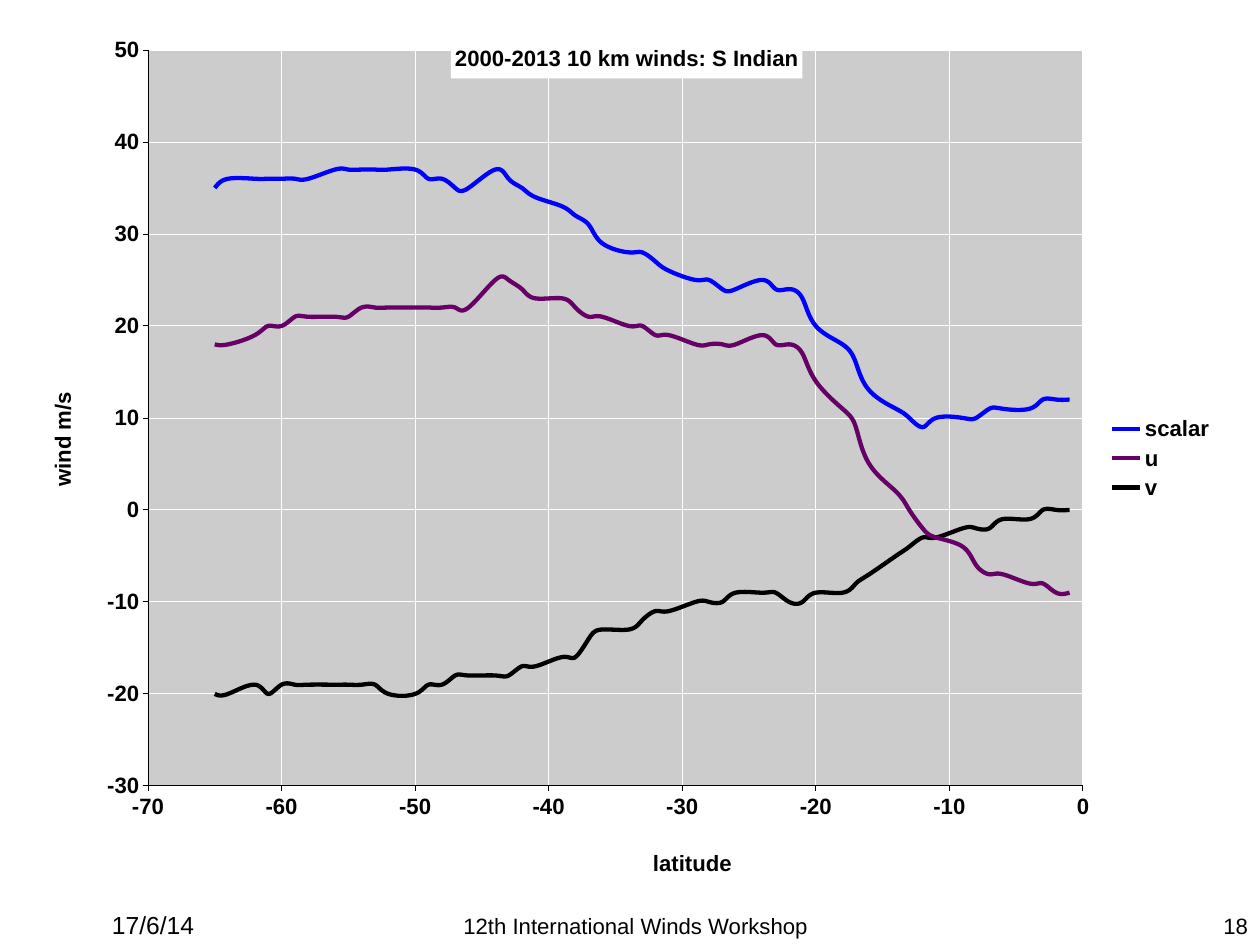
import pptx
import pptx.util
import pptx.chart.data
import pptx.dml.color
import pptx.enum.chart
import pptx.enum.text
import pptx.oxml
import pptx.oxml.ns

RGB = pptx.dml.color.RGBColor
ENUM = pptx.enum.chart
ALIGN = pptx.enum.text.PP_ALIGN
Pt = pptx.util.Pt
qn = pptx.oxml.ns.qn

BLACK = RGB(0x00, 0x00, 0x00)
WHITE = RGB(0xFF, 0xFF, 0xFF)
BLUE = RGB(0x00, 0x00, 0xFF)
PLUM = RGB(0x66, 0x00, 0x66)
GREY = RGB(0xCC, 0xCC, 0xCC)

# Content
SIZE = (1260, 945)
FOOT = [  # text, left, width, size, alignment
    ("17/6/14", 22, 262, 20, ALIGN.CENTER),
    ("12th International Winds Workshop", 436, 399, 18, ALIGN.CENTER),
    ("18", 998, 262, 18, ALIGN.RIGHT),
]
FOOT_TOP, FOOT_HIGH = 882, 63
BOX = (30, 19, 1194, 879)
PLOT = (148, 50, 935, 736)
TITLE = ("2000-2013 10 km winds: S Indian", 451, 40)
X_AXIS = ("latitude", 649, 845)
Y_AXIS = ("wind m/s", 44, 388)
KEY = (1105, 412)
# Whole degrees south, without those that hold no band
GAPS = {5, 10, 15, 19, 25, 30, 35, 40, 45, 51, 57, 63}
LATS = [-deg for deg in range(1, 66) if deg not in GAPS]
WINDS = [
    ("scalar", BLUE, [
        12, 12, 12, 11, 11, 11, 10, 10, 10, 9, 10, 11, 13, 16, 18, 20, 23,
        24, 24, 25, 24, 24, 25, 25, 26, 27, 28, 28, 29, 31, 32, 33, 34, 35,
        36, 37, 35, 35, 36, 36, 37, 37, 37, 37, 37, 37, 36, 36, 36, 36, 36,
        36, 35]),
    ("u", PLUM, [
        -9, -9, -8, -8, -7, -7, -6, -4, -3, -2, 0, 2, 5, 9, 11, 14, 17, 18,
        18, 19, 18, 18, 18, 18, 19, 19, 20, 20, 21, 21, 22, 23, 23, 24, 25,
        25, 22, 22, 22, 22, 22, 22, 22, 22, 21, 21, 21, 21, 20, 20, 19, 18,
        18]),
    ("v", BLACK, [
        0, 0, 0, -1, -1, -2, -2, -2, -3, -3, -4, -5, -7, -8, -9, -9, -10,
        -10, -9, -9, -9, -10, -10, -10, -11, -11, -12, -13, -13, -14, -16,
        -16, -17, -17, -18, -18, -18, -18, -19, -19, -20, -20, -19, -19,
        -19, -19, -19, -19, -19, -20, -19, -20, -20]),
]


def px(n):
    return round(n * 914400 / 88.6)


def apply(item, form):
    for name, val in form.items():
        setattr(item, name, val)


def style(font, size=18, bold=True):
    apply(font, {"name": "Arial", "size": Pt(size), "bold": bold})
    font.color.rgb = BLACK


def stroke(line, color, width):
    line.color.rgb = color
    line.width = Pt(width)


def place(node, left, top, wide=None, high=None):
    """Pin a chart part at a px position inside the chart box."""
    for old in node.findall(qn("c:layout")):
        node.remove(old)
    marks = [("xMode", "edge"), ("yMode", "edge"),
             ("x", round((left - BOX[0]) / BOX[2], 4)),
             ("y", round((top - BOX[1]) / BOX[3], 4))]
    if wide:
        marks.insert(0, ("layoutTarget", "inner"))
        marks += [("w", round(wide / BOX[2], 4)),
                  ("h", round(high / BOX[3], 4))]
    body = "".join(f'<c:{tag} val="{val}"/>' for tag, val in marks)
    spot = pptx.oxml.parse_xml(
        f'<c:layout {pptx.oxml.ns.nsdecls("c")}>'
        f'<c:manualLayout>{body}</c:manualLayout></c:layout>')
    over = node.find(qn("c:overlay"))
    if over is None:
        node.insert(0, spot)
    else:
        over.addprevious(spot)


def label(title, text, left, top):
    frame = title.text_frame
    frame.text = text
    style(frame.paragraphs[0].runs[0].font)
    place(title._element, left, top)


def bend(row):
    """Draw a scatter series as a smooth curve."""
    node = row._element
    for old in node.findall(qn("c:smooth")):
        node.remove(old)
    node.find(qn("c:yVal")).addnext(pptx.oxml.parse_xml(
        f'<c:smooth {pptx.oxml.ns.nsdecls("c")} val="1"/>'))


def build_foot(slide):
    for text, left, wide, size, align in FOOT:
        box = slide.shapes.add_textbox(
            px(left), px(FOOT_TOP), px(wide), px(FOOT_HIGH))
        frame = box.text_frame
        apply(frame, {
            "word_wrap": True,
            "vertical_anchor": pptx.enum.text.MSO_ANCHOR.BOTTOM,
            "margin_left": px(12), "margin_right": px(12),
            "margin_top": px(6), "margin_bottom": px(6)})
        para = frame.paragraphs[0]
        para.alignment = align
        run = para.add_run()
        run.text = text
        style(run.font, size, False)


def build_chart(slide):
    data = pptx.chart.data.XyChartData()
    for name, _, speeds in WINDS:
        row = data.add_series(name)
        for lat, speed in zip(LATS, speeds):
            row.add_data_point(lat, speed)
    chart = slide.shapes.add_chart(
        ENUM.XL_CHART_TYPE.XY_SCATTER_SMOOTH_NO_MARKERS,
        *map(px, BOX), data).chart
    style(chart.font, 10, False)
    chart.plots[0].vary_by_categories = False

    # Curves
    for row, (_, color, _) in zip(chart.plots[0].series, WINDS):
        bend(row)
        row.marker.style = ENUM.XL_MARKER_STYLE.NONE
        stroke(row.format.line, color, 3.5)

    # Axes
    for axis, low, high, text in ((chart.category_axis, -70, 0, X_AXIS),
                                  (chart.value_axis, -30, 50, Y_AXIS)):
        apply(axis, {
            "minimum_scale": low, "maximum_scale": high, "major_unit": 10,
            "has_major_gridlines": True,
            "major_tick_mark": ENUM.XL_TICK_MARK.OUTSIDE,
            "minor_tick_mark": ENUM.XL_TICK_MARK.NONE,
            "tick_label_position": ENUM.XL_TICK_LABEL_POSITION.LOW,
            "crosses": ENUM.XL_AXIS_CROSSES.MINIMUM})
        apply(axis.tick_labels, {
            "number_format": "0", "number_format_is_linked": False})
        style(axis.tick_labels.font)
        stroke(axis.format.line, BLACK, 0.75)
        stroke(axis.major_gridlines.format.line, WHITE, 0.75)
        label(axis.axis_title, *text)

    # Title over the plot
    chart.has_title = True
    title = chart.chart_title
    label(title, *TITLE)
    title._element.find(qn("c:overlay")).set("val", "1")
    title.format.fill.solid()
    title.format.fill.fore_color.rgb = WHITE

    # Legend
    chart.has_legend = True
    apply(chart.legend, {"position": ENUM.XL_LEGEND_POSITION.RIGHT,
                         "include_in_layout": False})
    style(chart.legend.font)
    place(chart.legend._element, *KEY)

    # Plot area
    area = chart._chartSpace.chart.plotArea
    place(area, *PLOT)
    area.append(pptx.oxml.parse_xml(
        f'<c:spPr {pptx.oxml.ns.nsdecls("c", "a")}><a:solidFill>'
        f'<a:srgbClr val="{GREY}"/></a:solidFill>'
        '<a:ln><a:noFill/></a:ln></c:spPr>'))


def main():
    deck = pptx.Presentation()
    deck.slide_width, deck.slide_height = map(px, SIZE)
    slide = deck.slides.add_slide(deck.slide_layouts[6])
    build_foot(slide)
    build_chart(slide)
    deck.save("out.pptx")


if __name__ == "__main__":
    main()
